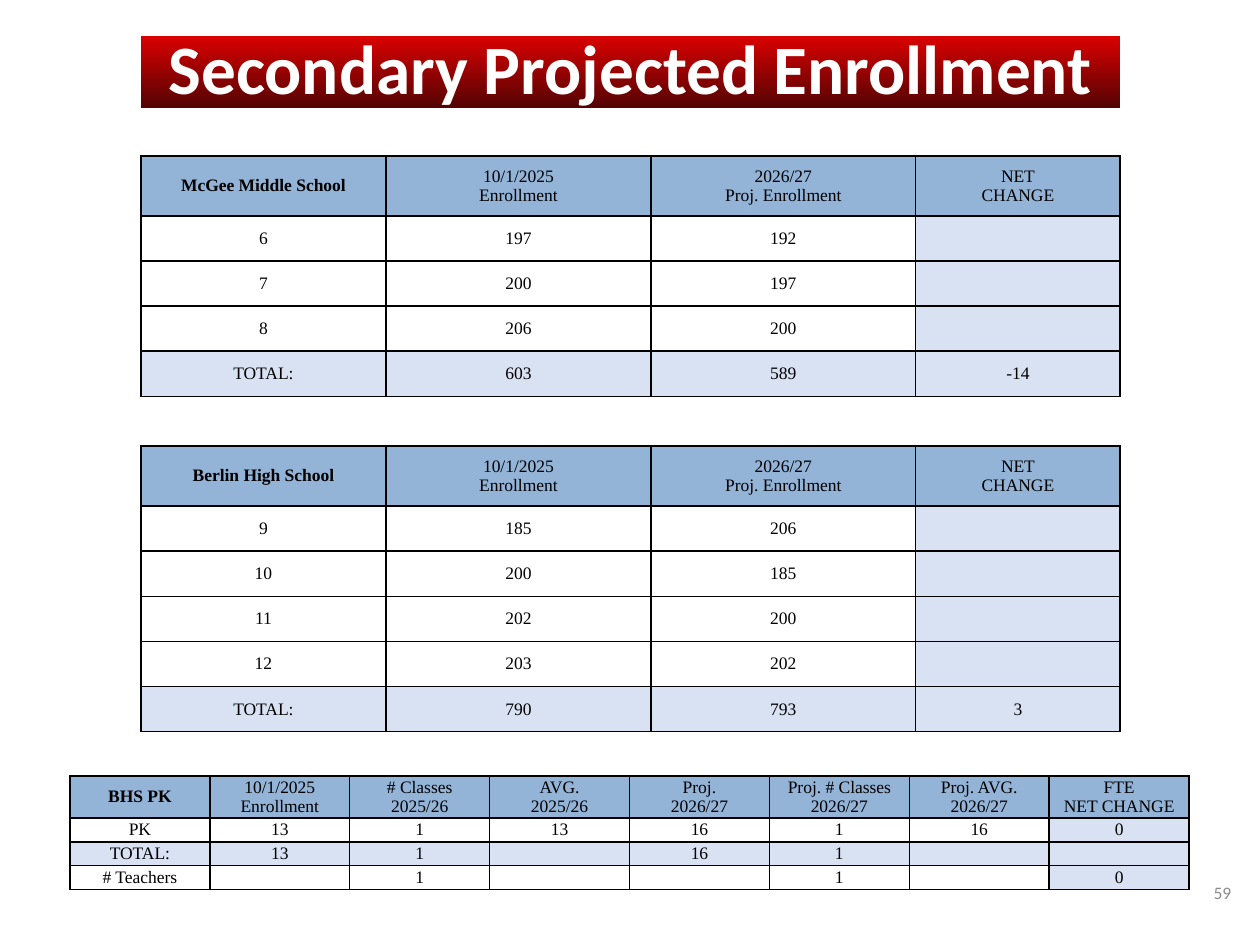
from dataclasses import dataclass

import lxml.etree
import pptx
import pptx.dml.color
import pptx.enum.text
import pptx.oxml.ns
import pptx.util

Cm = pptx.util.Cm
Pt = pptx.util.Pt
ALIGN = pptx.enum.text.PP_ALIGN
MIDDLE = pptx.enum.text.MSO_ANCHOR.MIDDLE

COLORS = {
    "header": "93B3D7",
    "summary": "D9E2F3",
    "ink": "000000",
    "title": "FFFFFF",
    "title_top": "DB0000",
    "title_bottom": "540303",
    "number": "8C8C8C",
}
CELL_FONT = {"name": "Times New Roman", "size": Pt(10)}
SCHOOL_COLS = [4.94, 5.34, 5.34, 4.12]
SCHOOL_HEADS = ["10/1/2025\nEnrollment", "2026/27\nProj. Enrollment", "NET\nCHANGE"]


@dataclass
class EnrollmentTable:
    """Position and sizes are in centimetres."""
    left: float
    top: float
    cols: list[float]
    header_height: float
    row_height: float
    rows: list[list[str]]


TABLES = [
    EnrollmentTable(2.84, 3.14, SCHOOL_COLS, 1.21, 0.91, [
        ["McGee Middle School", *SCHOOL_HEADS],
        ["6", "197", "192", ""],
        ["7", "200", "197", ""],
        ["8", "206", "200", ""],
        ["TOTAL:", "603", "589", "-14"],
    ]),
    EnrollmentTable(2.84, 8.99, SCHOOL_COLS, 1.21, 0.91, [
        ["Berlin High School", *SCHOOL_HEADS],
        ["9", "185", "206", ""],
        ["10", "200", "185", ""],
        ["11", "202", "200", ""],
        ["12", "203", "202", ""],
        ["TOTAL:", "790", "793", "3"],
    ]),
    EnrollmentTable(1.41, 15.64, [2.82] * 8, 0.79, 0.48, [
        ["BHS PK", "10/1/2025 Enrollment", "# Classes\n2025/26", "AVG.\n2025/26",
         "Proj.\n2026/27", "Proj. # Classes\n2026/27", "Proj. AVG.\n2026/27",
         "FTE\nNET CHANGE"],
        ["PK", "13", "1", "13", "16", "1", "16", "0"],
        ["TOTAL:", "13", "1", "", "16", "1", "", ""],
        ["# Teachers", "", "1", "", "", "1", "", "0"],
    ]),
]


def rgb(key: str) -> pptx.dml.color.RGBColor:
    return pptx.dml.color.RGBColor.from_string(COLORS[key])


def style_font(font, color: str, **values) -> None:
    for name, value in values.items():
        setattr(font, name, value)
    font.color.rgb = rgb(color)


def add_borders(cell) -> None:
    tc_pr = cell._tc.get_or_add_tcPr()
    qn = pptx.oxml.ns.qn
    for side in ("lnL", "lnR", "lnT", "lnB"):
        ln = lxml.etree.SubElement(tc_pr, qn(f"a:{side}"), w=str(Pt(1)))
        fill = lxml.etree.SubElement(ln, qn("a:solidFill"))
        lxml.etree.SubElement(fill, qn("a:srgbClr"), val=COLORS["ink"])


def fill_cell(cell, text: str, fill: str | None, bold: bool) -> None:
    add_borders(cell)
    if fill:
        cell.fill.solid()
        cell.fill.fore_color.rgb = rgb(fill)
    else:
        cell.fill.background()
    cell.vertical_anchor = MIDDLE
    for side in ("left", "right", "top", "bottom"):
        setattr(cell, f"margin_{side}", 0)
    cell.text_frame.text = text
    for p in cell.text_frame.paragraphs:
        p.alignment = ALIGN.CENTER
        for r in p.runs:
            style_font(r.font, "ink", bold=bold, **CELL_FONT)
        if not p.runs:
            # Keeps an empty cell from stretching its row
            p._p.get_or_add_endParaRPr().set("sz", "1000")


def add_enrollment_table(s, spec_: EnrollmentTable) -> None:
    heights = [spec_.header_height] + [spec_.row_height] * (len(spec_.rows) - 1)
    table = s.shapes.add_table(
        len(heights), len(spec_.cols), Cm(spec_.left), Cm(spec_.top),
        Cm(sum(spec_.cols)), Cm(sum(heights))).table
    table.first_row = table.horz_banding = False
    for col, width in zip(table.columns, spec_.cols):
        col.width = Cm(width)
    for i, (values, height) in enumerate(zip(spec_.rows, heights)):
        table.rows[i].height = Cm(height)
        for j, text in enumerate(values):
            if i == 0:
                fill = "header"
            elif values[0] == "TOTAL:" or j == len(values) - 1:
                fill = "summary"
            else:
                fill = None
            fill_cell(table.cell(i, j), text, fill, bold=i == j == 0)


def format_title(sp, text: str) -> None:
    sp.left, sp.top, sp.width, sp.height = Cm(2.84), Cm(0.72), Cm(19.74), Cm(1.45)
    sp.fill.gradient()
    sp.fill.gradient_angle = 270
    for stop, key in zip(sp.fill.gradient_stops, ("title_top", "title_bottom")):
        stop.color.rgb = rgb(key)
    tf = sp.text_frame
    tf.text = text
    tf.word_wrap = True
    tf.auto_size = pptx.enum.text.MSO_AUTO_SIZE.NONE
    tf.vertical_anchor = MIDDLE
    p = tf.paragraphs[0]
    p.alignment = ALIGN.CENTER
    p.line_spacing = 0.9
    style_font(p.runs[0].font, "title", name="Calibri", size=Pt(39.6), bold=True)


def add_slide_number(s, number: str) -> None:
    tf = s.shapes.add_textbox(Cm(23.55), Cm(17.27), Cm(1.52), Cm(1.45)).text_frame
    tf.word_wrap = True
    tf.vertical_anchor = MIDDLE
    tf.margin_top = tf.margin_bottom = Cm(0.25)
    tf.text = number
    p = tf.paragraphs[0]
    p.alignment = ALIGN.RIGHT
    style_font(p.runs[0].font, "number", name="Calibri", size=Pt(10))


def main() -> None:
    prs = pptx.Presentation()
    prs.slide_width, prs.slide_height = Cm(25.4), Cm(19.05)
    s = prs.slides.add_slide(prs.slide_layouts[5])
    format_title(s.shapes.title, "Secondary Projected Enrollment")
    add_slide_number(s, "59")
    for table in TABLES:
        add_enrollment_table(s, table)
    prs.save("out.pptx")


if __name__ == "__main__":
    main()
